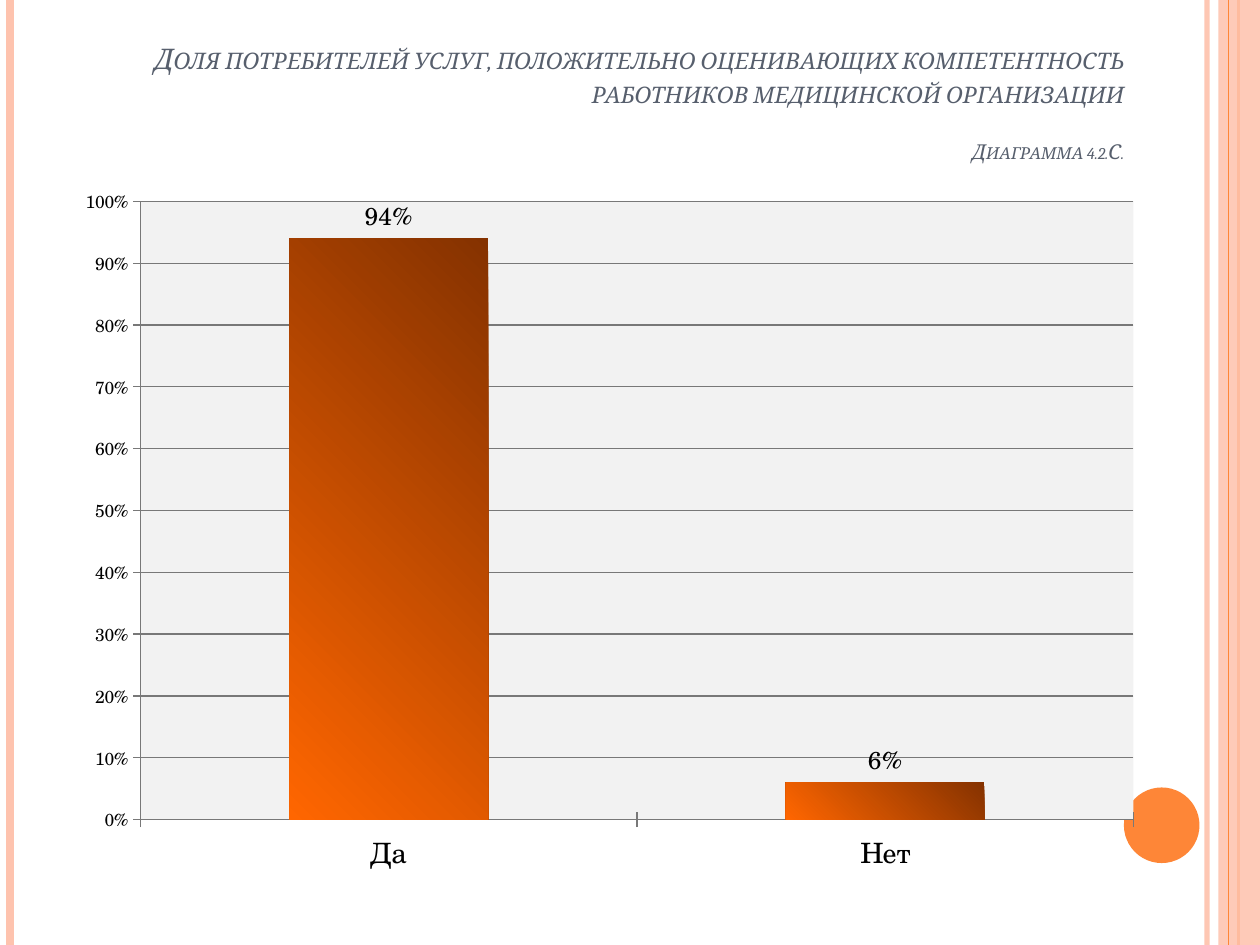
from dataclasses import dataclass

from lxml import etree
from pptx import Presentation
from pptx.chart.data import CategoryChartData
from pptx.dml.color import RGBColor
from pptx.enum.chart import XL_CHART_TYPE, XL_LABEL_POSITION, XL_TICK_MARK
from pptx.enum.shapes import MSO_CONNECTOR, MSO_SHAPE
from pptx.enum.text import MSO_ANCHOR, PP_ALIGN
from pptx.oxml import parse_xml
from pptx.oxml.ns import nsdecls, qn
from pptx.util import Inches, Pt

COLUMNS = XL_CHART_TYPE.COLUMN_CLUSTERED
OUTSIDE_END = XL_LABEL_POSITION.OUTSIDE_END
CROSS = XL_TICK_MARK.CROSS
OUTSIDE = XL_TICK_MARK.OUTSIDE
STRAIGHT = MSO_CONNECTOR.STRAIGHT
RECTANGLE, OVAL = MSO_SHAPE.RECTANGLE, MSO_SHAPE.OVAL
RIGHT, TOP = PP_ALIGN.RIGHT, MSO_ANCHOR.TOP


@dataclass(frozen=True)
class Theme:
    title_font: str = "Cambria"
    chart_font: str = "TeX Gyre Schola"
    accent: str = "FE8637"
    pale: str = "FEC3AE"
    title: str = "575F6D"
    black: str = "000000"
    grid: str = "787878"
    plot: str = "F2F2F2"
    bar_light: str = "FF6600"
    bar_dark: str = "853200"
    title_size: float = 16.2
    caption_size: float = 11.7
    axis_size: float = 10
    category_size: float = 16
    label_size: float = 14


def rgb(value):
    return RGBColor.from_string(value)


def set_font(font, name, size, color):
    font.name, font.size = name, Pt(size)
    font.color.rgb = rgb(color)


def add_text(paragraph, text, *, font, size, color, align, space_before=0):
    """Write one italic small-caps run into a paragraph."""
    paragraph.alignment = align
    paragraph.space_before = Pt(space_before)
    run = paragraph.add_run()
    run.text = text
    set_font(run.font, font, size, color)
    run.font.italic = True
    run.font._element.set("cap", "small")


def set_alpha(fill_parent, percent):
    color = fill_parent.find(".//" + qn("a:srgbClr"))
    etree.SubElement(color, qn("a:alpha")).set("val", str(percent * 1000))


class SlideBuilder:
    def __init__(self, slide, theme):
        self.slide, self.theme = slide, theme

    def vertical_line(self, x, color, width, alpha=100):
        line = self.slide.shapes.add_connector(
            STRAIGHT, Inches(x), 0, Inches(x), Inches(7.5))
        line.line.color.rgb = rgb(color)
        line.line.width = Pt(width)
        properties = line._element.spPr
        if alpha < 100:
            set_alpha(properties, alpha)
        etree.SubElement(properties, qn("a:effectLst"))

    def shape(self, kind, box, color, alpha=100):
        shape = self.slide.shapes.add_shape(kind, *map(Inches, box))
        shape.shadow.inherit = False
        shape.fill.solid()
        shape.fill.fore_color.rgb = rgb(color)
        shape.line.fill.background()
        if alpha < 100:
            set_alpha(shape._element.spPr, alpha)

    def title(self, box, heading, caption):
        theme = self.theme
        frame = self.slide.shapes.add_textbox(*map(Inches, box)).text_frame
        frame.word_wrap = True
        frame.vertical_anchor = TOP
        frame.margin_top = Inches(0.03)
        style = dict(font=theme.title_font, color=theme.title, align=RIGHT)
        add_text(frame.paragraphs[0], heading, size=theme.title_size, **style)
        add_text(frame.add_paragraph(), caption, size=theme.caption_size,
                 space_before=17, **style)

    def column_chart(self, box, categories, values):
        theme = self.theme
        data = CategoryChartData(number_format="0%")
        data.categories = categories
        data.add_series("Series 1", values)
        chart = self.slide.shapes.add_chart(
            COLUMNS, *map(Inches, box), data).chart
        chart.has_legend = chart.has_title = False
        set_font(chart.font, theme.chart_font, theme.axis_size, theme.black)

        # Axes and gridlines
        value_axis, category_axis = chart.value_axis, chart.category_axis
        value_axis.minimum_scale, value_axis.maximum_scale = 0, 1
        value_axis.major_unit = 0.1
        value_axis.has_major_gridlines = True
        value_axis.tick_labels.number_format = "0%"
        value_axis.tick_labels.number_format_is_linked = False
        for axis, size in ((value_axis, theme.axis_size),
                           (category_axis, theme.category_size)):
            axis.major_tick_mark = OUTSIDE
            axis.format.line.color.rgb = rgb(theme.grid)
            set_font(axis.tick_labels.font, theme.chart_font, size, theme.black)
        category_axis.major_tick_mark = CROSS
        value_axis.major_gridlines.format.line.color.rgb = rgb(theme.grid)

        # Columns and their labels
        plot = chart.plots[0]
        plot.gap_width, plot.vary_by_categories = 150, False
        plot.has_data_labels = True
        labels = plot.data_labels
        labels.show_value = True
        labels.position = OUTSIDE_END
        labels.number_format, labels.number_format_is_linked = "0%", False
        set_font(labels.font, theme.chart_font, theme.label_size, theme.black)
        self.radial_fill(plot.series[0])
        self.plot_area(chart._chartSpace.chart.plotArea)

    def radial_fill(self, series):
        """Shade the columns outwards from their lower left corner."""
        fill = series.format.fill
        fill.gradient()
        colors = (self.theme.bar_light, self.theme.bar_dark)
        for position, (stop, color) in enumerate(zip(fill.gradient_stops, colors)):
            stop.color.rgb, stop.position = rgb(color), position
        linear = series._element.find(".//" + qn("a:lin"))
        linear.getparent().replace(linear, parse_xml(
            f'<a:path {nsdecls("a")} path="circle">'
            '<a:fillToRect t="100000" r="100000"/></a:path>'))

    def plot_area(self, area):
        for layout in area.findall(qn("c:layout")):
            area.remove(layout)
        sizes = (("x", 0.07), ("y", 0.037), ("w", 0.91), ("h", 0.87))
        places = "".join(f'<c:{key} val="{value}"/>' for key, value in sizes)
        area.insert(0, parse_xml(
            f'<c:layout {nsdecls("c")}><c:manualLayout>'
            '<c:layoutTarget val="inner"/><c:xMode val="edge"/>'
            f'<c:yMode val="edge"/>{places}</c:manualLayout></c:layout>'))
        area.append(parse_xml(
            f'<c:spPr {nsdecls("c", "a")}><a:solidFill>'
            f'<a:srgbClr val="{self.theme.plot}"/></a:solidFill></c:spPr>'))


def main():
    presentation = Presentation()
    presentation.slide_width, presentation.slide_height = Inches(10), Inches(7.5)
    slide = presentation.slides.add_slide(presentation.slide_layouts[6])
    theme = Theme()
    builder = SlideBuilder(slide, theme)

    # Side stripes and circle
    builder.vertical_line(9.58, theme.pale, 3, alpha=93)
    builder.vertical_line(0.08, theme.pale, 4.5)
    builder.vertical_line(9.83, theme.accent, 1.5)
    builder.shape(RECTANGLE, (9.67, 0, 0.33, 7.5), theme.pale, alpha=87)
    builder.vertical_line(9.75, theme.accent, 0.75)
    builder.shape(OVAL, (8.92, 6.25, 0.6, 0.6), theme.accent)

    # Title and chart
    builder.title(
        (0.5, 0.3, 8.52, 1.25),
        "Доля потребителей услуг, положительно оценивающих "
        "компетентность работников медицинской организации",
        "Диаграмма 4.2.С.")
    builder.column_chart((0.51, 1.39, 8.66, 5.64), ("Да", "Нет"), (0.94, 0.06))

    presentation.save("out.pptx")


if __name__ == "__main__":
    main()
